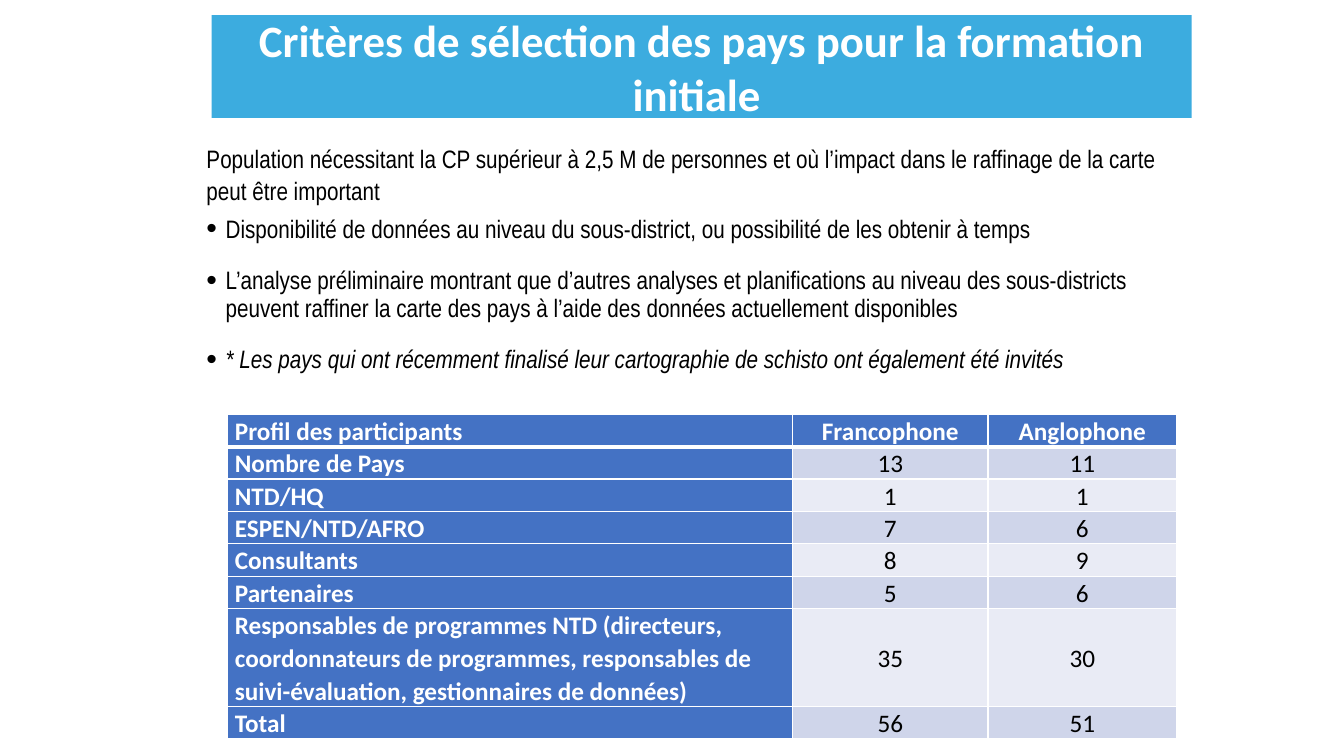
"""Build the slide on country selection criteria for the initial training."""
from lxml.etree import SubElement
from pptx import Presentation
from pptx.dml.color import RGBColor
from pptx.enum.shapes import MSO_SHAPE
from pptx.enum.text import MSO_ANCHOR, PP_ALIGN
from pptx.oxml.ns import qn
from pptx.util import Inches, Pt

COLORS = {"banner": "3CACDF", "header": "4472C4", "odd": "CFD5EA",
          "even": "E9EBF5", "white": "FFFFFF", "black": "000000"}
TITLE = "Critères de sélection des pays pour la formation initiale "
INTRO = ("Population nécessitant la CP supérieur à 2,5 M de personnes et où l’impact "
         "dans le raffinage de la carte peut être important")
BULLETS = [
    "Disponibilité de données au niveau du sous-district, ou possibilité de les obtenir à temps",
    "L’analyse préliminaire montrant que d’autres analyses et planifications au niveau des "
    "sous-districts peuvent raffiner la carte des pays à l’aide des données actuellement disponibles",
    "* Les pays qui ont récemment finalisé leur cartographie de schisto ont également été invités",
]
ROWS = [
    ("Profil des participants", "Francophone", "Anglophone"),
    ("Nombre de Pays", "13", "11"),
    ("NTD/HQ", "1", "1"),
    ("ESPEN/NTD/AFRO", "7", "6"),
    ("Consultants", "8", "9"),
    ("Partenaires", "5", "6"),
    ("Responsables de programmes NTD (directeurs, coordonnateurs de programmes, "
     "responsables de suivi-évaluation, gestionnaires de données)", "35", "30"),
    ("Total", "56", "51"),
]
COL_WIDTHS = (5.6, 1.94, 1.87)
ROW_HEIGHT, TALL_ROW, TALL_HEIGHT = 0.32, 6, 0.97


def rgb(name):
    """Return the named colour."""
    return RGBColor.from_string(COLORS[name])


def style(p, font, size, color, bold=False, italic=False):
    """Format every run of a paragraph."""
    for r in p.runs:
        r.font.name, r.font.size = font, Pt(size)
        r.font.bold, r.font.italic = bold, italic
        r.font.color.rgb = rgb(color)


def add_bullet(p):
    """Give a paragraph a hanging round bullet."""
    pPr = p._p.get_or_add_pPr()
    pPr.set("marL", str(Inches(0.19)))
    pPr.set("indent", str(Inches(-0.19)))
    SubElement(pPr, qn("a:buSzPct")).set("val", "120000")
    SubElement(pPr, qn("a:buFont")).set("typeface", "Arial")
    SubElement(pPr, qn("a:buChar")).set("char", "•")


def add_borders(cell, top, bottom):
    """Draw white lines around a cell, with widths in points."""
    tcPr = cell._tc.get_or_add_tcPr()
    for side, width in (("L", 1), ("R", 1), ("T", top), ("B", bottom)):
        ln = SubElement(tcPr, qn(f"a:ln{side}"), w=str(Pt(width)))
        fill = SubElement(ln, qn("a:solidFill"))
        SubElement(fill, qn("a:srgbClr")).set("val", COLORS["white"])


def add_criteria(s):
    """Add the introduction and the bulleted criteria."""
    tf = s.shapes.add_textbox(Inches(1.95), Inches(1.35), Inches(9.87), Inches(2.49)).text_frame
    tf.word_wrap = True
    p = tf.paragraphs[0]
    p.text = INTRO
    p.line_spacing = 1.07
    style(p, "Arial Narrow", 18, "black")
    for text in BULLETS:
        p = tf.add_paragraph()
        p.text = text
        add_bullet(p)
        p.line_spacing, p.space_before, p.space_after = 0.9, Pt(7.5), Pt(10)
        style(p, "Arial Narrow", 18, "black", italic=text.startswith("*"))


def add_title(s):
    """Add the title banner."""
    sp = s.shapes.add_shape(MSO_SHAPE.RECTANGLE, Inches(2.1), Inches(0.15), Inches(9.72), Inches(1.02))
    sp.shadow.inherit = False
    sp.fill.solid()
    sp.fill.fore_color.rgb = rgb("banner")
    sp.line.fill.background()
    tf = sp.text_frame
    tf.word_wrap = True
    tf.vertical_anchor = MSO_ANCHOR.MIDDLE
    tf.margin_left = tf.margin_right = Inches(0.11)
    p = tf.paragraphs[0]
    p.text = TITLE
    p.alignment = PP_ALIGN.CENTER
    style(p, "Calibri", 32, "white", bold=True)


def add_participants(s):
    """Add the table of participants."""
    heights = [TALL_HEIGHT if i == TALL_ROW else ROW_HEIGHT for i in range(len(ROWS))]
    table = s.shapes.add_table(len(ROWS), len(COL_WIDTHS), Inches(2.26), Inches(4.11),
                               Inches(sum(COL_WIDTHS)), Inches(sum(heights))).table
    for col, width in zip(table.columns, COL_WIDTHS):
        col.width = Inches(width)
    for i, values in enumerate(ROWS):
        table.rows[i].height = Inches(heights[i])
        for j, value in enumerate(values):
            cell = table.cell(i, j)
            heading = i == 0 or j == 0
            add_borders(cell, 3 if i == 1 else 1, 3 if i == 0 else 1)
            cell.fill.solid()
            cell.fill.fore_color.rgb = rgb("header" if heading else "odd" if i % 2 else "even")
            cell.margin_left = cell.margin_right = Inches(0.07)
            cell.margin_top = cell.margin_bottom = 0
            cell.vertical_anchor = MSO_ANCHOR.TOP if heading else MSO_ANCHOR.MIDDLE
            p = cell.text_frame.paragraphs[0]
            p.text = value
            p.line_spacing = 1.07
            p.alignment = PP_ALIGN.CENTER if j else PP_ALIGN.LEFT
            style(p, "Calibri", 18, "white" if heading else "black", bold=heading)


def main():
    """Create and save the presentation."""
    prs = Presentation()
    prs.slide_width, prs.slide_height = Inches(13.33), Inches(7.5)
    s = prs.slides.add_slide(prs.slide_layouts[6])
    add_criteria(s)
    add_title(s)
    add_participants(s)
    prs.save("out.pptx")


if __name__ == "__main__":
    main()
